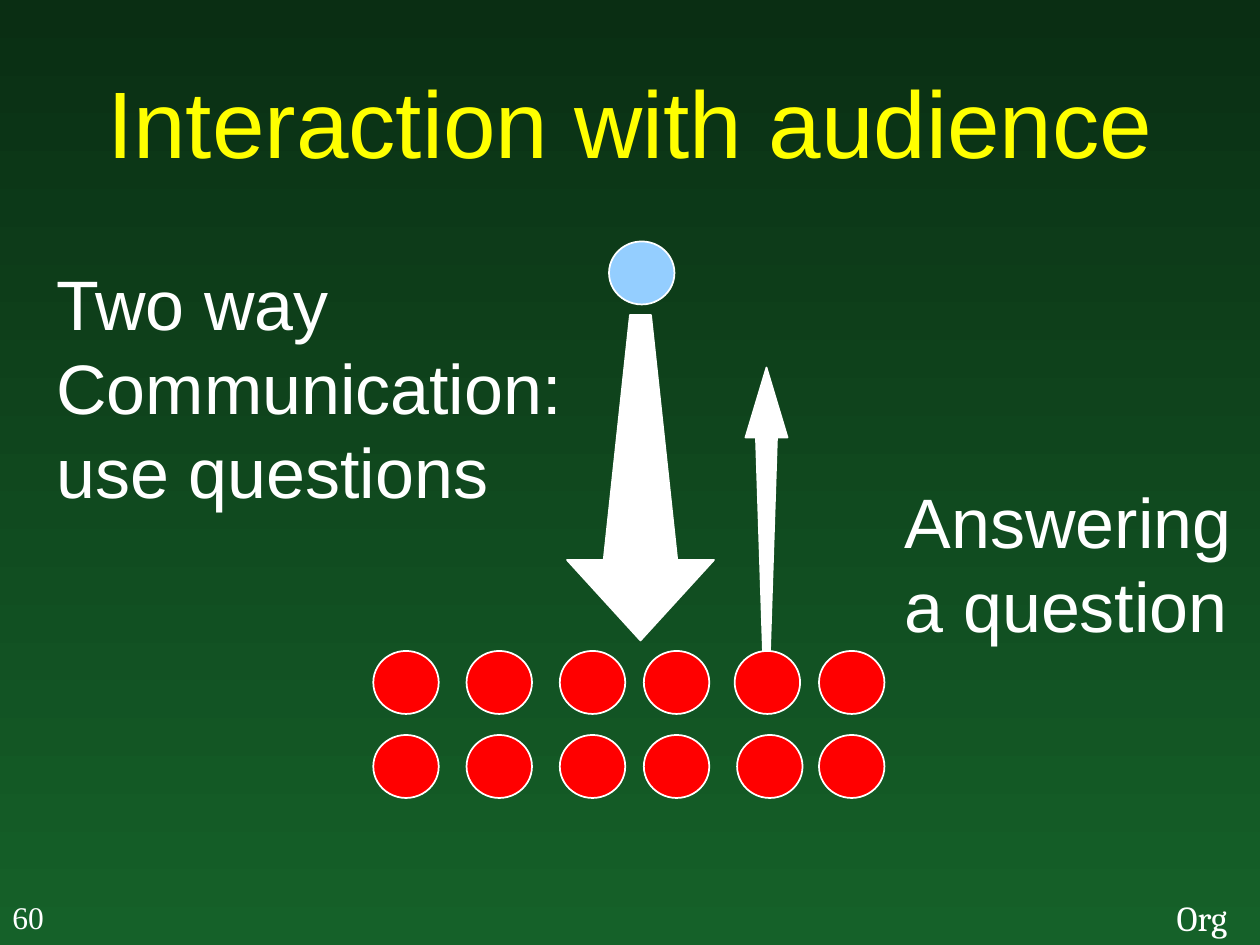
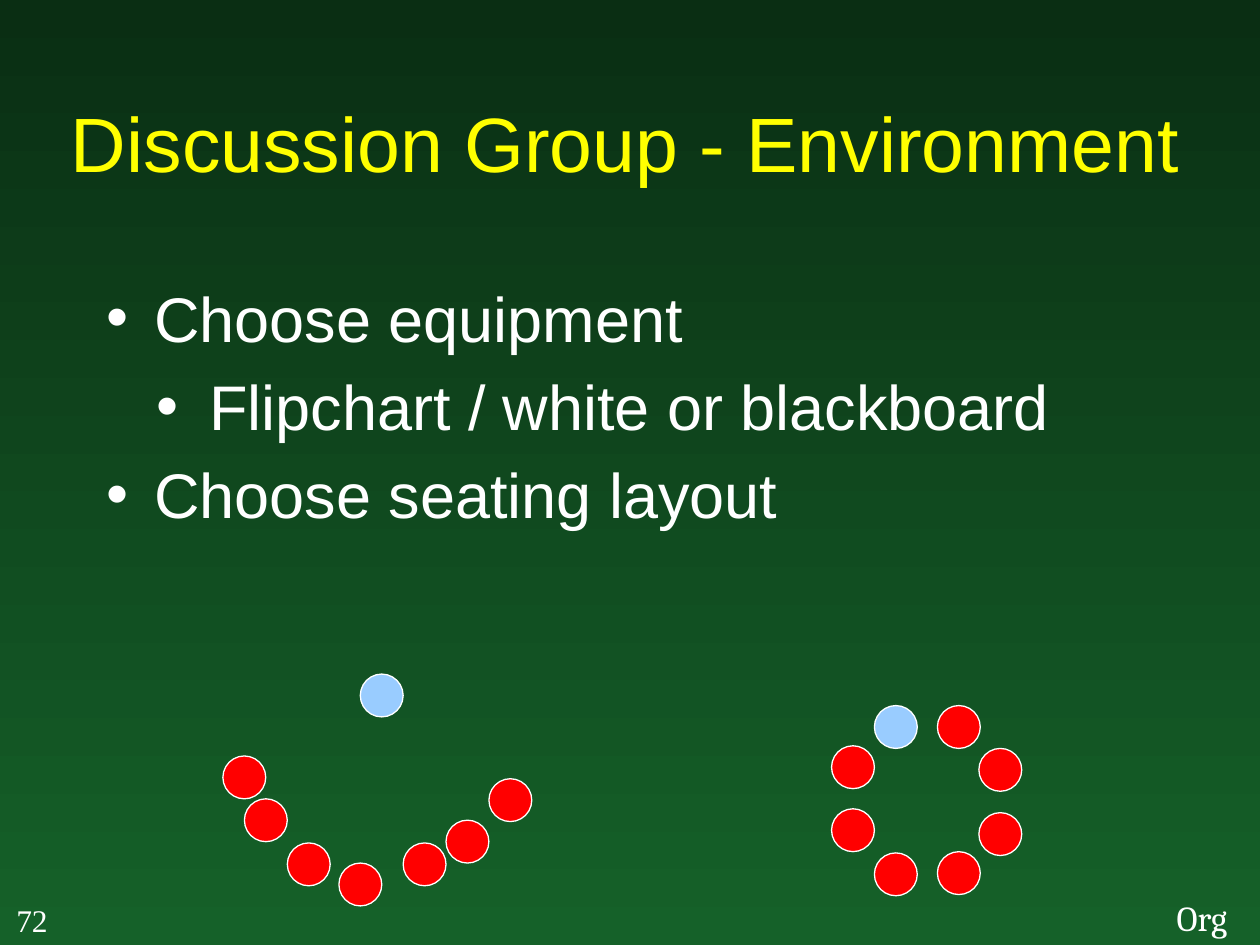
from lxml.etree import SubElement
from pptx import Presentation
from pptx.dml.color import RGBColor
from pptx.enum.shapes import MSO_SHAPE
from pptx.enum.text import MSO_ANCHOR, PP_ALIGN
from pptx.oxml.ns import qn
from pptx.util import Pt

WHITE, YELLOW, RED = "FFFFFF", "FFFF00", "FF0000"
GREEN_TOP, GREEN_BOTTOM = "0A2E13", "156129"
SANS = "Arial"
SEAT = 24.5


def rgb(value):
    return RGBColor.from_string(value)


def add_text(s, text, box, size, font=SANS, color=WHITE, wrap=True):
    sp = s.shapes.add_textbox(*map(Pt, box))
    tf = sp.text_frame
    tf.word_wrap = wrap
    tf.text = text
    for p in tf.paragraphs:
        for r in p.runs:
            r.font.size = Pt(size)
            r.font.name = font
            r.font.color.rgb = rgb(color)
    return tf


def add_title(s, text, box, size):
    tf = add_text(s, text, box, size, color=YELLOW)
    tf.vertical_anchor = MSO_ANCHOR.MIDDLE
    tf.paragraphs[0].alignment = PP_ALIGN.CENTER


def add_bullets(s, items, box, size):
    tf = add_text(s, "\n".join(text for text, _ in items), box, size)
    indents = [(27, -27), (58.5, -30)]
    for p, (_, level) in zip(tf.paragraphs, items):
        p.level = level
        margin, hanging = indents[level]
        pPr = p._p.get_or_add_pPr()
        pPr.set("marL", str(Pt(margin)))
        pPr.set("indent", str(Pt(hanging)))
        before = SubElement(pPr, qn("a:spcBef"))
        SubElement(before, qn("a:spcPct")).set("val", "20000")
        SubElement(pPr, qn("a:buFont")).set("typeface", SANS)
        SubElement(pPr, qn("a:buChar")).set("char", "•")


def paint(sp, fill, line_width):
    sp.shadow.inherit = False
    sp.fill.solid()
    sp.fill.fore_color.rgb = rgb(fill)
    sp.line.color.rgb = rgb(WHITE)
    sp.line.width = Pt(line_width)


def add_person(shapes, x, y, fill=RED):
    sp = shapes.add_shape(MSO_SHAPE.FLOWCHART_CONNECTOR, Pt(x), Pt(y), Pt(37.4), Pt(36))
    paint(sp, fill, 1)


def add_seating(s, leader, seats):
    group = s.shapes.add_group_shape()
    for x, y in [leader] + seats:
        sp = group.shapes.add_shape(MSO_SHAPE.OVAL, Pt(x), Pt(y), Pt(SEAT), Pt(SEAT))
        paint(sp, "99CCFF" if (x, y) == leader else RED, 0.75)


def add_tapered_arrow(s, axis, tail_y, neck_y, tip_y, tail, neck, head):
    side = [(tail, tail_y), (neck, neck_y), (head, neck_y)]
    left = [(axis - half, y) for half, y in side]
    right = [(axis + half, y) for half, y in reversed(side)]
    outline = s.shapes.build_freeform(*left[0], scale=Pt(1))
    outline.add_line_segments(left[1:] + [(axis, tip_y)] + right, close=True)
    paint(outline.convert_to_shape(), WHITE, 1)


def add_slide(prs, number, number_at):
    s = prs.slides.add_slide(prs.slide_layouts[6])
    fill = s.background.fill
    fill.gradient()
    fill.gradient_angle = 270
    for stop, color in zip(fill.gradient_stops, (GREEN_TOP, GREEN_BOTTOM)):
        stop.color.rgb = rgb(color)
    add_text(s, "Org", (665.3, 508.8, 52.6, 31), 20, "Cambria", wrap=False)
    add_text(s, number, (*number_at, 32.4, 29), 18, "Times New Roman", wrap=False)
    return s


def build_interaction(prs):
    s = add_slide(prs, "60", (0, 509.8))
    add_title(s, "Interaction with audience", (0, 24, 720, 90), 54)
    for y, fifth_x in ((372, 419.8), (420, 421.2)):
        for x in (213.3, 266.6, 319.9, 367.9, fifth_x, 468):
            add_person(s.shapes, x, y)
    add_person(s.shapes, 348, 138, "94CEFF")
    add_text(s, "Two way\nCommunication:\vuse questions", (25.2, 145.4, 311.8, 151.2), 40)
    add_tapered_arrow(s, 366, 180, 320.4, 366, 6, 21, 42)
    add_tapered_arrow(s, 438, 372, 249.8, 210, 1.8, 6, 12)
    add_text(s, "Answering a question", (510, 270, 210, 103), 40)


def build_environment(prs):
    s = add_slide(prs, "72", (2.2, 511.2))
    add_title(s, "Discussion Group - Environment", (20, 36, 675, 90), 44)
    bullets = [
        ("Choose equipment", 0),
        ("Flipchart / white or blackboard", 1),
        ("Choose seating layout", 0),
    ]
    add_bullets(s, bullets, (54, 156, 612, 324), 36)
    ring = [(475.2, 426.2), (475.2, 462.2), (499.7, 487.4), (535.7, 486.7),
            (559.4, 464.4), (559.4, 427.7), (535.7, 403.2)]
    add_seating(s, (499.7, 403.2), ring)
    horseshoe = [(127.4, 432), (139.7, 456.5), (164.2, 481.7), (193.7, 493.2),
                 (230.4, 481.7), (254.9, 468.7), (279.4, 445)]
    add_seating(s, (205.9, 385.2), horseshoe)


def main():
    prs = Presentation()
    prs.slide_width, prs.slide_height = Pt(720), Pt(540)
    build_interaction(prs)
    build_environment(prs)
    prs.save("out.pptx")


if __name__ == "__main__":
    main()
